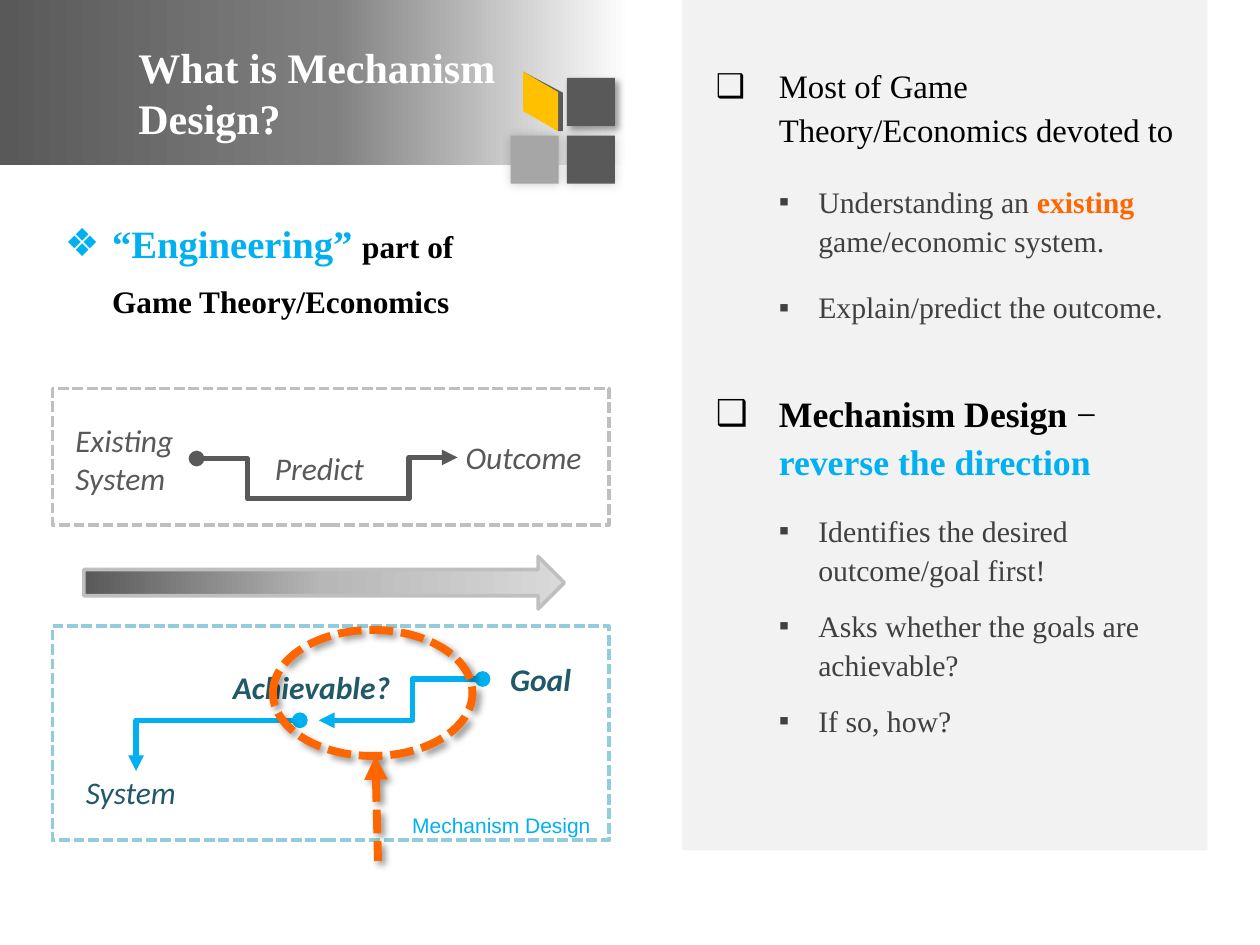
from lxml import etree
from pptx import Presentation
from pptx.dml.color import RGBColor
from pptx.enum.dml import MSO_LINE
from pptx.enum.shapes import MSO_CONNECTOR, MSO_SHAPE
from pptx.enum.text import MSO_ANCHOR, PP_ALIGN
from pptx.oxml.ns import qn
from pptx.util import Pt

RECT, OVAL, ARROW = MSO_SHAPE.RECTANGLE, MSO_SHAPE.OVAL, MSO_SHAPE.RIGHT_ARROW
STRAIGHT, ELBOW = MSO_CONNECTOR.STRAIGHT, MSO_CONNECTOR.ELBOW
DASH = MSO_LINE.SQUARE_DOT
TOP, MIDDLE, BOTTOM = MSO_ANCHOR.TOP, MSO_ANCHOR.MIDDLE, MSO_ANCHOR.BOTTOM
LEFT, RIGHT = PP_ALIGN.LEFT, PP_ALIGN.RIGHT
SERIF, SANS, LABEL = "Times New Roman", "Arial", "Calibri"
COLORS = {
    "black": "000000", "white": "FFFFFF", "dark": "595959", "text": "404040",
    "mid": "808080", "silver": "A6A6A6", "ash": "B7B7B7", "rule": "BFBFBF",
    "pale": "D9D9D9", "panel": "F2F2F2", "gold": "FFC000", "orange": "FF6600",
    "blue": "00B0F0", "sky": "93CDDD", "teal": "215968",
}


class SlideBuilder:
    """Draws styled elements on the current slide, with lengths in points."""

    def __init__(self, slide):
        self.slide = slide
        self.shapes = slide.shapes

    def color(self, name):
        return RGBColor.from_string(COLORS[name])

    def child(self, parent, tag, **attributes):
        return etree.SubElement(parent, qn(tag), {k: str(v) for k, v in attributes.items()})

    def shadow(self, effects, alpha, blur, distance, angle):
        outer = self.child(effects, "a:outerShdw", blurRad=Pt(blur), dist=Pt(distance),
                           dir=angle * 60000, algn="ctr", rotWithShape=0)
        tint = self.child(outer, "a:srgbClr", val=COLORS["black"])
        self.child(tint, "a:alpha", val=alpha * 1000)

    def stroke(self, line, color, width, dash=None):
        line.color.rgb = self.color(color)
        for name, value in {"width": Pt(width), "dash_style": dash}.items():
            setattr(line, name, value)

    def finish(self, shape, fill=None, line=None, shadow=None):
        shape.shadow.inherit = False
        if isinstance(fill, list):
            self.gradient(shape, fill)
        elif fill:
            shape.fill.solid()
            shape.fill.fore_color.rgb = self.color(fill)
        else:
            shape.fill.background()
        if line:
            self.stroke(shape.line, *line)
        else:
            shape.line.fill.background()
        if shadow:
            self.shadow(shape._element.spPr.find(qn("a:effectLst")), *shadow)

    def gradient(self, shape, stops):
        shape.fill.gradient()
        shape.fill.gradient_angle = 0
        stop_list = shape._element.spPr.find(".//" + qn("a:gsLst"))
        for stop in list(stop_list):
            stop_list.remove(stop)
        for position, name in stops:
            stop = self.child(stop_list, "a:gs", pos=position * 1000)
            self.child(stop, "a:srgbClr", val=COLORS[name])

    def shape(self, kind, box, **style):
        self.finish(self.shapes.add_shape(kind, *map(Pt, box)), **style)

    def polygon(self, points, fill):
        corners = [(Pt(x), Pt(y)) for x, y in points]
        outline = self.shapes.build_freeform(*corners[0], scale=1.0)
        outline.add_line_segments(corners[1:], close=True)
        self.finish(outline.convert_to_shape(), fill=fill)

    def connector(self, start, end, line, kind=ELBOW, head=None, tail=None,
                  bend=None, corner=False, shadow=None):
        link = self.shapes.add_connector(kind, *map(Pt, start + end))
        self.stroke(link.line, *line)
        properties = link._element.spPr
        geometry = properties.find(qn("a:prstGeom"))
        if corner:
            geometry.set("prst", "bentConnector2")
        if bend:
            guides = geometry.find(qn("a:avLst"))
            self.child(guides, "a:gd", name="adj1", fmla=f"val {round(bend * 100000)}")
        stroke = properties.find(qn("a:ln"))
        for tag, tip in (("a:headEnd", head), ("a:tailEnd", tail)):
            if tip:
                self.child(stroke, tag, type=tip)
        effects = self.child(properties, "a:effectLst")
        if shadow:
            self.shadow(effects, *shadow)

    def text(self, box, paragraphs, anchor=TOP, wrap=True, bottom=3.6):
        frame = self.shapes.add_textbox(*map(Pt, box)).text_frame
        settings = {"word_wrap": wrap, "vertical_anchor": anchor, "margin_bottom": Pt(bottom)}
        for name, value in settings.items():
            setattr(frame, name, value)
        for index, (runs, layout) in enumerate(paragraphs):
            paragraph = frame.add_paragraph() if index else frame.paragraphs[0]
            self.paragraph(paragraph, runs, **layout)

    def paragraph(self, paragraph, runs, bullet=None, margin=0, hang=0, **layout):
        for name, value in layout.items():
            setattr(paragraph, name, value)
        if bullet:
            properties = paragraph._p.get_or_add_pPr()
            properties.set("marL", str(Pt(margin)))
            properties.set("indent", str(Pt(-hang)))
            self.child(properties, "a:buFont", typeface=SANS)
            self.child(properties, "a:buChar", char=bullet)
        for words, size, font, color, *marks in runs:
            for index, part in enumerate(words.split("\n")):
                if index:
                    paragraph.add_line_break()
                run = paragraph.add_run()
                run.text = part
                run.font.color.rgb = self.color(color)
                style = {"size": Pt(size), "name": font,
                         "bold": "b" in marks, "italic": "i" in marks}
                for name, value in style.items():
                    setattr(run.font, name, value)

    def label(self, box, lines, color, *marks, wrap=True):
        self.text(box, [([(words, 18, LABEL, color, "i", *marks)], {}) for words in lines],
                  wrap=wrap)


def topic(runs, before):
    return runs, {"bullet": "❑", "margin": 36, "hang": 36, "line_spacing": 1.1,
                  "space_before": Pt(before), "space_after": Pt(12)}


def point(*runs, before=3.4, after=6):
    styled = [(words, 17, SERIF, *look) for words, *look in runs]
    return styled, {"bullet": "▪", "margin": 58.5, "hang": 22.5, "line_spacing": 1.1,
                    "space_before": Pt(before), "space_after": Pt(after)}


def main():
    deck = Presentation()
    deck.slide_width, deck.slide_height = Pt(720), Pt(540)
    page = SlideBuilder(deck.slides.add_slide(deck.slide_layouts[6]))
    drop = (40, 4, 3, 45)

    page.shape(RECT, (0, 0, 360, 94.5), fill=[(0, "dark"), (53, "mid"), (100, "white")])
    page.polygon([(299, 41), (321.7, 53), (321.7, 75), (318.9, 75)], "dark")
    page.polygon([(299, 41), (318.9, 52.6), (318.9, 75), (299, 63.5)], "gold")
    for left, top, fill, shadow in (
        (291.8, 77.5, "silver", (20, 6, 0, 225)),
        (323.9, 77.5, "dark", (20, 6, 0, 315)),
        (323.9, 44.5, "dark", drop),
    ):
        page.shape(RECT, (left, top, 27.5, 27.5), fill=fill, shadow=shadow)
    page.shape(RECT, (390, 0, 300, 486), fill="panel")

    page.text((30, 108, 288, 78), [(
        [("“Engineering” ", 22.1, SERIF, "blue", "b"),
         ("part of \nGame Theory/Economics", 17.9, SERIF, "black", "b")],
        {"bullet": "❖", "margin": 27, "hang": 27, "line_spacing": 1.4, "space_before": Pt(4.4)},
    )], anchor=BOTTOM)
    page.text((402, 31.5, 282, 428), [
        topic([("Most of Game Theory/Economics devoted to", 18.7, SERIF, "black")], 18),
        point(("Understanding an ", "text"), ("existing ", "orange", "b"),
              ("game/economic system.", "text"), before=6, after=12),
        point(("Explain/predict the outcome.", "text")),
        topic([("Mechanism Design ", 20.4, SERIF, "black", "b"), ("− ", 20.4, SERIF, "black"),
               ("reverse the direction", 20.4, SERIF, "blue", "b")], 30),
        point(("Identifies the desired outcome/goal first!", "text")),
        point(("Asks whether the goals are achievable?", "text")),
        point(("If so, how?", "text")),
    ], anchor=MIDDLE, bottom=37)
    page.text((72, 6, 240, 79), [([("What is Mechanism Design?", 24, SERIF, "white", "b")], {})],
              anchor=BOTTOM)

    page.shape(ARROW, (48, 318, 274.5, 30), line=("rule", 2.08),
               fill=[(0, "dark"), (50, "ash"), (100, "pale")])

    page.shape(RECT, (30, 222, 318, 78), line=("rule", 2.08, DASH))
    page.label((36, 237, 72, 51), ["Existing", "System"], "dark")
    page.label((259, 247, 83, 29), ["Outcome"], "dark")
    page.label((150, 253, 108, 29), ["Predict"], "dark")
    page.connector((186.5, 285), (261.5, 261.4), ("dark", 3), tail="triangle", bend=0.63)
    page.connector((112.3, 262), (190.8, 285), ("dark", 3), head="oval", bend=0.37)

    page.connector((275.8, 388), (182.2, 411.6), ("blue", 3), head="oval", tail="triangle",
                   bend=0.43)
    page.label((284.4, 373.5, 50, 29), ["Goal"], "teal", "b", wrap=False)
    page.connector((171.4, 411.6), (77.8, 440.6), ("blue", 3), head="oval", tail="triangle",
                   corner=True)
    page.label((126, 378, 105, 29), ["Achievable?"], "teal", "b", wrap=False)
    page.label((42, 438, 82, 29), ["System"], "teal")
    page.shape(RECT, (30, 357.8, 318, 122.4), line=("sky", 2.08, DASH))
    page.text((204, 461, 144, 18),
              [([("Mechanism Design ", 12, SANS, "blue")], {"alignment": RIGHT})])

    page.shape(OVAL, (156, 360, 114, 72), line=("orange", 4.5, DASH), shadow=drop)
    page.connector((214.5, 432), (216, 492), ("orange", 4.5, DASH), kind=STRAIGHT,
                   head="triangle", shadow=drop)

    deck.save("out.pptx")


if __name__ == "__main__":
    main()
